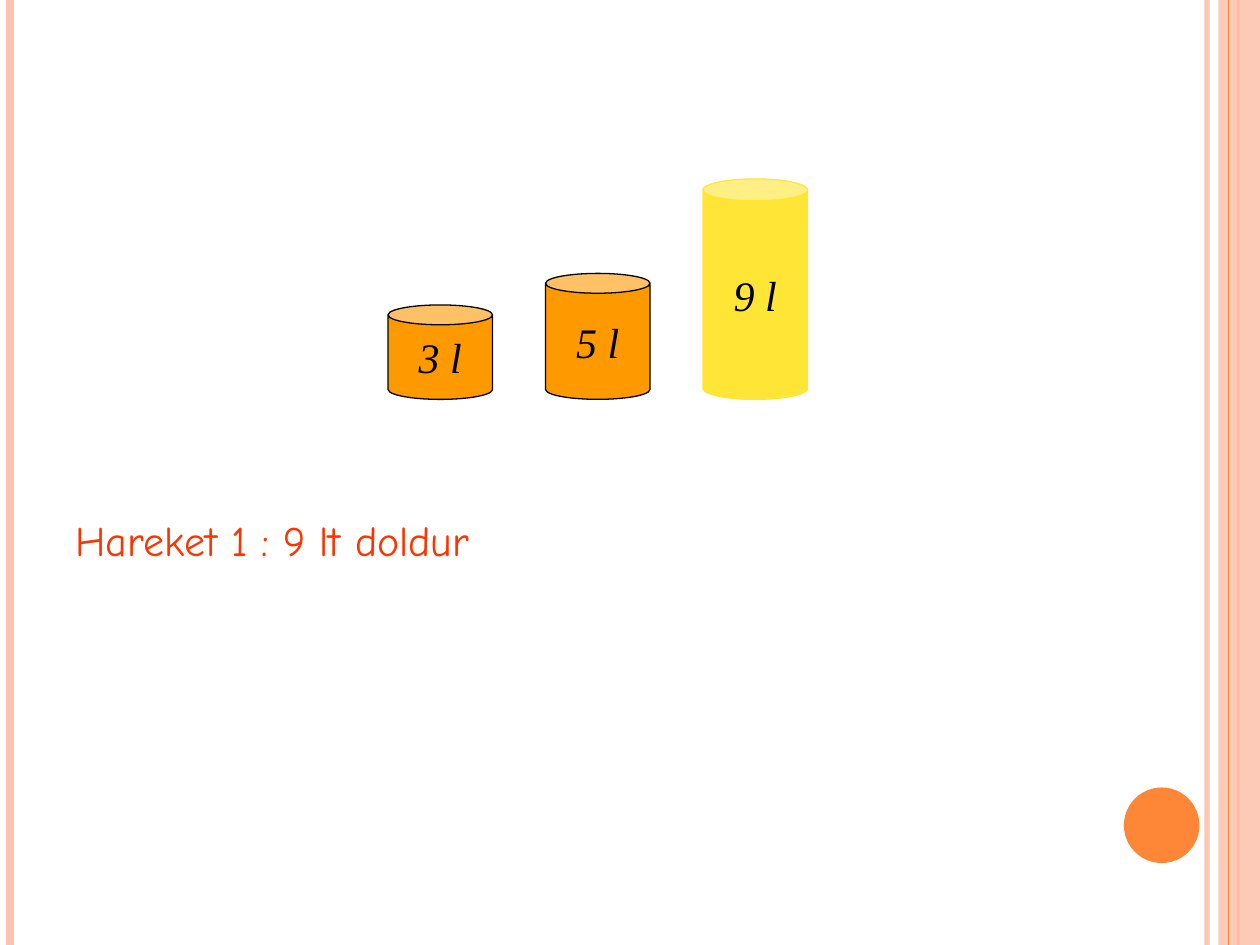
from lxml.etree import SubElement
from pptx import Presentation
from pptx.dml.color import RGBColor
from pptx.enum.shapes import MSO_CONNECTOR, MSO_SHAPE
from pptx.enum.text import MSO_ANCHOR, MSO_AUTO_SIZE, PP_ALIGN
from pptx.oxml.ns import qn
from pptx.util import Inches, Pt

COLORS = {
    "peach": "FEC3AE",
    "orange": "FE8637",
    "can": "FF9900",
    "full": "FFE636",
    "action": "FF3300",
    "black": "000000",
}
SLIDE_HEIGHT = 7.5
CAN_WIDTH, CAN_STEP, CAN_LEFT, CAN_BOTTOM = 0.83, 1.25, 3.08, 3.17


def color(name):
    return RGBColor.from_string(COLORS[name])


def set_opacity(element, percent):
    """Make the solid colour inside a fill or line element translucent."""
    rgb = next(element.iter(qn("a:srgbClr")))
    SubElement(rgb, qn("a:alpha")).set("val", str(percent * 1000))


def add_stripe(slide, x, name, width, opacity=100):
    stripe = slide.shapes.add_connector(
        MSO_CONNECTOR.STRAIGHT, Inches(x), 0, Inches(x), Inches(SLIDE_HEIGHT))
    stripe.line.color.rgb = color(name)
    stripe.line.width = Pt(width)
    if opacity < 100:
        set_opacity(stripe.line._ln, opacity)
    SubElement(stripe._element.spPr, qn("a:effectLst"))


def add_filled(shapes, kind, box, fill, line=None):
    shape = shapes.add_shape(kind, *(Inches(value) for value in box))
    shape.shadow.inherit = False
    shape.fill.solid()
    shape.fill.fore_color.rgb = color(fill)
    if line:
        shape.line.color.rgb = color(line)
        shape.line.width = Pt(0.75)
    else:
        shape.line.fill.background()
    return shape


def add_run(paragraph, text, font, name, italic=None):
    run = paragraph.add_run()
    run.text = text
    run.font.name = font
    run.font.size = Pt(24)
    run.font.italic = italic
    run.font.color.rgb = color(name)


def add_can(shapes, index, label, height, rim, fill, line):
    box = (CAN_LEFT + index * CAN_STEP, CAN_BOTTOM - height, CAN_WIDTH, height)
    can = add_filled(shapes, MSO_SHAPE.CAN, box, fill, line)
    can.adjustments[0] = rim
    frame = can.text_frame
    frame.word_wrap = False
    frame.vertical_anchor = MSO_ANCHOR.MIDDLE
    paragraph = frame.paragraphs[0]
    paragraph.alignment = PP_ALIGN.CENTER
    add_run(paragraph, label, "Times New Roman", "black", italic=True)


def fill_body(body, text):
    body.left, body.top = Inches(0.5), Inches(4.08)
    body.width, body.height = Inches(9), Inches(1.8)
    frame = body.text_frame
    frame.word_wrap = True
    frame.auto_size = MSO_AUTO_SIZE.NONE
    frame.vertical_anchor = MSO_ANCHOR.TOP
    paragraph = frame.paragraphs[0]
    paragraph.alignment = PP_ALIGN.LEFT
    paragraph.line_spacing = 0.9
    paragraph.space_before = Pt(6)
    properties = paragraph._p.get_or_add_pPr()
    properties.set("marL", str(Inches(0.3)))
    properties.set("indent", str(Inches(-0.3)))
    SubElement(properties, qn("a:buNone"))
    add_run(paragraph, text, "Comic Neue", "action")


def main():
    presentation = Presentation()
    presentation.slide_width = Inches(10)
    presentation.slide_height = Inches(SLIDE_HEIGHT)
    slide = presentation.slides.add_slide(presentation.slide_layouts[1])
    title = slide.shapes.title._element
    title.getparent().remove(title)

    # Side stripes and corner disc
    add_stripe(slide, 9.58, "peach", 3, opacity=93)
    add_stripe(slide, 0.08, "peach", 4.5)
    add_stripe(slide, 9.83, "orange", 1.5)
    band = add_filled(slide.shapes, MSO_SHAPE.RECTANGLE,
                      (9.67, 0, 0.33, SLIDE_HEIGHT), "peach")
    set_opacity(band._element.spPr, 87)
    add_stripe(slide, 9.75, "orange", 0.75)
    add_filled(slide.shapes, MSO_SHAPE.OVAL, (8.92, 6.25, 0.6, 0.6), "orange")

    # Action text
    fill_body(slide.placeholders[1], "Hareket 1 : 9 lt doldur")

    # Containers standing on one base line
    cans = slide.shapes.add_group_shape().shapes
    for index, can in enumerate([
        ("3 l", 0.75, 0.21, "can", "black"),
        ("5 l", 1, 0.19, "can", "black"),
        ("9 l", 1.75, 0.21, "full", "full"),
    ]):
        add_can(cans, index, *can)

    presentation.save("out.pptx")


if __name__ == "__main__":
    main()
